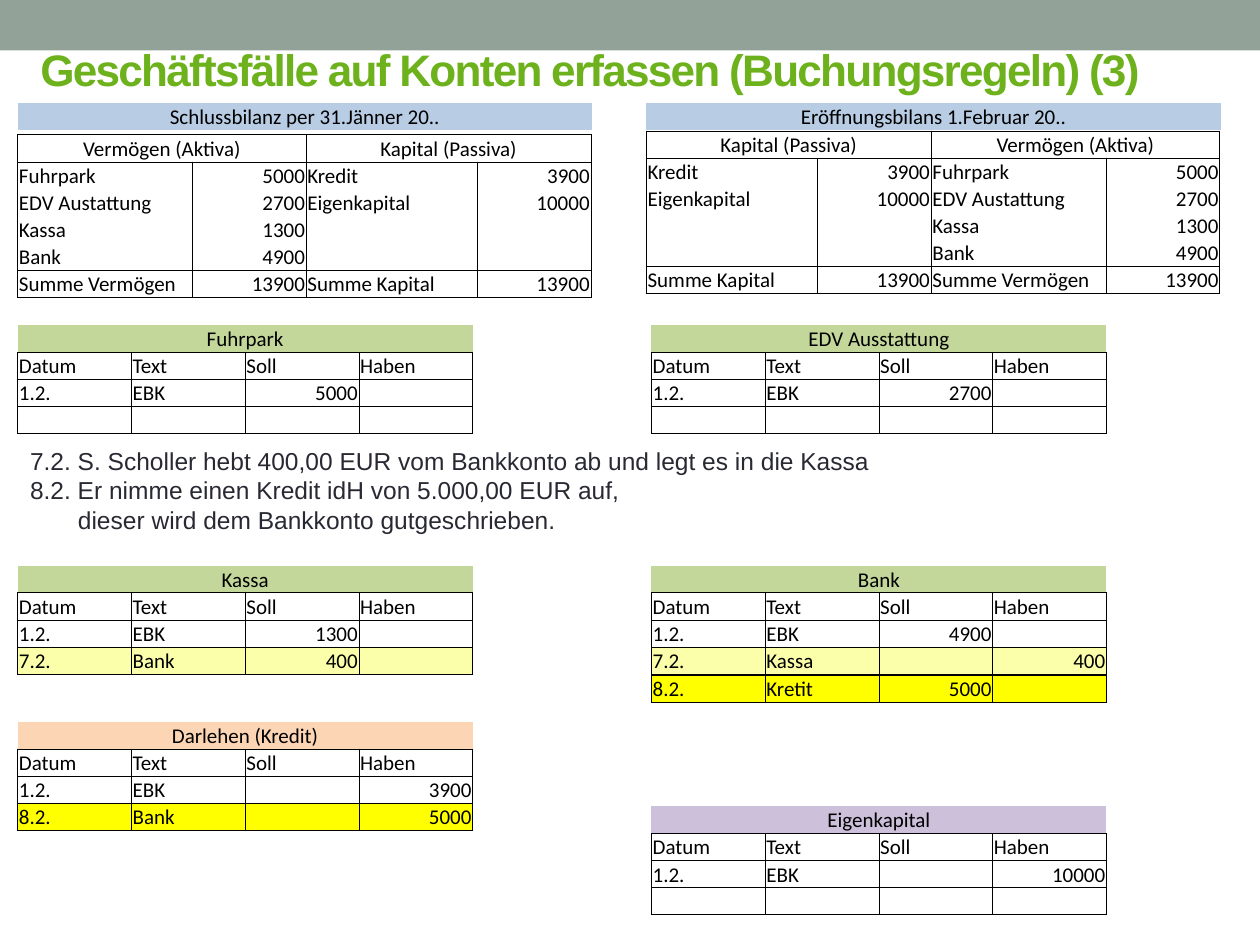
from dataclasses import dataclass

from lxml.etree import SubElement
from pptx import Presentation
from pptx.dml.color import RGBColor as Rgb
from pptx.enum.shapes import MSO_SHAPE as Shape
from pptx.enum.text import MSO_ANCHOR as Anchor, PP_ALIGN as Align
from pptx.oxml.ns import qn
from pptx.util import Inches, Pt


@dataclass(frozen=True)
class Theme:
    """Colours, fonts, type sizes and table measures; one grid unit is 0.1 inch."""
    bar: str = "93A299"
    title: str = "6DB21C"
    body: str = "292934"
    ink: str = "000000"
    balance: str = "B8CCE4"
    asset: str = "C4D79B"
    loan: str = "FCD5B4"
    equity: str = "CCC0DA"
    first_entry: str = "FBFFAA"
    second_entry: str = "FFFF00"
    heading_font: str = "Arial"
    table_font: str = "Calibri"
    title_size: float = 25.2
    body_size: float = 14
    table_size: float = 12
    row: float = 2.15
    inset: float = 0.1


def grid(units):
    """Turn grid units into a length."""
    return Inches(units / 10)


def write(para, text, *, size, font, color, bold=False, align=Align.LEFT, spacing=0, indent=0):
    """Put formatted text into a paragraph."""
    para.alignment = align
    if indent:
        para._p.get_or_add_pPr().set("marL", str(grid(indent)))
    if not text:
        SubElement(para._p, qn("a:endParaRPr"), sz=str(int(size * 100)))
        return
    span = para.add_run()
    span.text = text
    span.font.size, span.font.name, span.font.bold = Pt(size), font, bold
    span.font.color.rgb = Rgb.from_string(color)
    if spacing:
        span.font._element.set("spc", str(spacing * 100))


class Ledger:
    """Draws the elements of a bookkeeping slide."""

    def __init__(self, page, theme):
        """Keep the slide and its style."""
        self.page, self.theme = page, theme

    def bar(self, height):
        """Draw the band along the top edge behind everything else."""
        band = self.page.shapes.add_shape(Shape.RECTANGLE, 0, 0, grid(100), grid(height))
        band.shadow.inherit = False
        band.fill.solid()
        band.fill.fore_color.rgb = Rgb.from_string(self.theme.bar)
        band.line.fill.background()
        self.page.shapes._spTree.insert(2, band._element)

    def title(self, text, left, top, width, height):
        """Place and format the title."""
        box = self.page.shapes.title
        box.left, box.top, box.width, box.height = map(grid, (left, top, width, height))
        box.text_frame.vertical_anchor = Anchor.MIDDLE
        write(box.text_frame.paragraphs[0], text, size=self.theme.title_size,
              font=self.theme.heading_font, color=self.theme.title, bold=True, spacing=-1)

    def notes(self, lines, left, top, width, height):
        """Write lines of text, each with its indent."""
        box = self.page.shapes.add_textbox(*map(grid, (left, top, width, height)))
        frame = box.text_frame
        frame.word_wrap = False
        for index, (text, indent) in enumerate(lines):
            para = frame.add_paragraph() if index else frame.paragraphs[0]
            write(para, text, size=self.theme.body_size, font=self.theme.heading_font,
                  color=self.theme.body, indent=indent)

    def borders(self, cell, sides):
        """Draw the named sides of a cell and clear the others."""
        props = cell._tc.get_or_add_tcPr()
        for side in "LRTB":
            line = SubElement(props, qn(f"a:ln{side}"), w=str(Pt(0.5)))
            if side in sides:
                fill = SubElement(line, qn("a:solidFill"))
                SubElement(fill, qn("a:srgbClr"), val=self.theme.ink)
            else:
                SubElement(line, qn("a:noFill"))

    def table(self, rows, left, top, widths, *, sides="LRTB", ends="", fills=(), align=Align.LEFT):
        """Draw a table; a lone text in a wider table spans the row as its heading."""
        theme, count = self.theme, len(widths)
        frame = self.page.shapes.add_table(len(rows), count, grid(left), grid(top),
                                           grid(sum(widths)), grid(theme.row * len(rows)))
        table = frame.table
        table.first_row = table.horz_banding = False
        for column, width in zip(table.columns, widths):
            column.width = grid(width)
        for y, texts in enumerate(rows):
            table.rows[y].height = grid(theme.row)
            heading = len(texts) < count
            edges = "B" if heading else sides
            if y == 0 and "T" in ends:
                edges += "T"
            if y == len(rows) - 1 and "B" in ends:
                edges += "B"
            for x in range(count):
                cell = table.cell(y, x)
                self.borders(cell, edges)
                cell.margin_left = cell.margin_right = cell.margin_top = grid(theme.inset)
                cell.margin_bottom = 0
                cell.vertical_anchor = Anchor.BOTTOM
                color = fills[y] if y < len(fills) else None
                if color:
                    cell.fill.solid()
                    cell.fill.fore_color.rgb = Rgb.from_string(color)
                else:
                    cell.fill.background()
                text = texts[x] if x < len(texts) else ""
                place = Align.CENTER if heading else Align.RIGHT if text.isdigit() else align
                write(cell.text_frame.paragraphs[0], text, size=theme.table_size,
                      font=theme.table_font, color=theme.ink, align=place)
            if heading:
                table.cell(y, 0).merge(table.cell(y, count - 1))

    def balance(self, text, left, top, assets_left, capital_left):
        """Draw a balance sheet with its asset and capital sides."""
        body, total = top + self.theme.row, top + 5 * self.theme.row
        self.table([[text]], left, 8.2, [45.6], sides="",
                   fills=[self.theme.balance], align=Align.CENTER)

        self.table([["Vermögen (Aktiva)"]], assets_left, top, [22.9], align=Align.CENTER)
        names = ["Fuhrpark", "EDV Austattung", "Kassa", "Bank"]
        amounts = ["5000", "2700", "1300", "4900"]
        for texts, x, width in ((names, 0, 13.9), (amounts, 13.9, 9)):
            self.table([[text] for text in texts], assets_left + x, body, [width],
                       sides="LR", ends="TB")
        self.table([["Summe Vermögen", "13900"]], assets_left, total, [13.9, 9])

        widths = [13.6, 9]
        self.table([["Kapital (Passiva)"]], capital_left, top, [sum(widths)], align=Align.CENTER)
        self.table([["Kredit", "3900"]], capital_left, body, widths, sides="LR", ends="T")
        self.table([["Eigenkapital", "10000"], ["", ""], ["", ""]], capital_left,
                   body + self.theme.row, widths, sides="LR", ends="B")
        self.table([["Summe Kapital", "13900"]], capital_left, total, widths)

    def account(self, name, left, top, color, entries, marks=()):
        """Draw a ledger account and mark its new entries."""
        rows = [[name], ["Datum", "Text", "Soll", "Haben"], *entries]
        self.table(rows, left, top, [9.03] * 4, fills=[color, None, None, *marks])


def main():
    """Build the slide and save it."""
    deck = Presentation()
    deck.slide_width, deck.slide_height = grid(100), grid(75)
    theme = Theme()
    ledger = Ledger(deck.slides.add_slide(deck.slide_layouts[5]), theme)
    near, far = 1.4, 51.7
    blank = [""] * 4

    ledger.bar(4)
    ledger.title("Geschäftsfälle auf Konten erfassen (Buchungsregeln) (3)", 2.2, 3, 90, 5)
    ledger.balance("Schlussbilanz per 31.Jänner 20..", near, 10.7, near, 24.3)
    ledger.balance("Eröffnungsbilans 1.Februar 20..", 51.3, 10.4, 73.9, 51.3)

    ledger.account("Fuhrpark", near, 25.8, theme.asset, [["1.2.", "EBK", "5000", ""], blank])
    ledger.account("EDV Ausstattung", far, 25.8, theme.asset,
                   [["1.2.", "EBK", "2700", ""], blank])
    ledger.notes([
        ("7.2. S. Scholler hebt 400,00 EUR vom Bankkonto ab und legt es in die Kassa", 0),
        ("8.2. Er nimme einen Kredit idH von 5.000,00 EUR auf,", 0),
        ("dieser wird dem Bankkonto gutgeschrieben.", 3.8),
    ], near, 34.9, 69.1, 8.1)
    ledger.account("Kassa", near, 44.9, theme.asset,
                   [["1.2.", "EBK", "1300", ""], ["7.2.", "Bank", "400", ""]],
                   [theme.first_entry])
    ledger.account("Bank", far, 44.9, theme.asset,
                   [["1.2.", "EBK", "4900", ""], ["7.2.", "Kassa", "", "400"]],
                   [theme.first_entry])
    ledger.table([["8.2.", "Kretit", "5000", ""]], far, 53.6, [9.03] * 4,
                 fills=[theme.second_entry])
    ledger.account("Darlehen (Kredit)", near, 57.3, theme.loan,
                   [["1.2.", "EBK", "", "3900"], ["8.2.", "Bank", "", "5000"]],
                   [theme.second_entry])
    ledger.account("Eigenkapital", far, 64, theme.equity,
                   [["1.2.", "EBK", "", "10000"], blank])
    deck.save("out.pptx")


if __name__ == "__main__":
    main()
